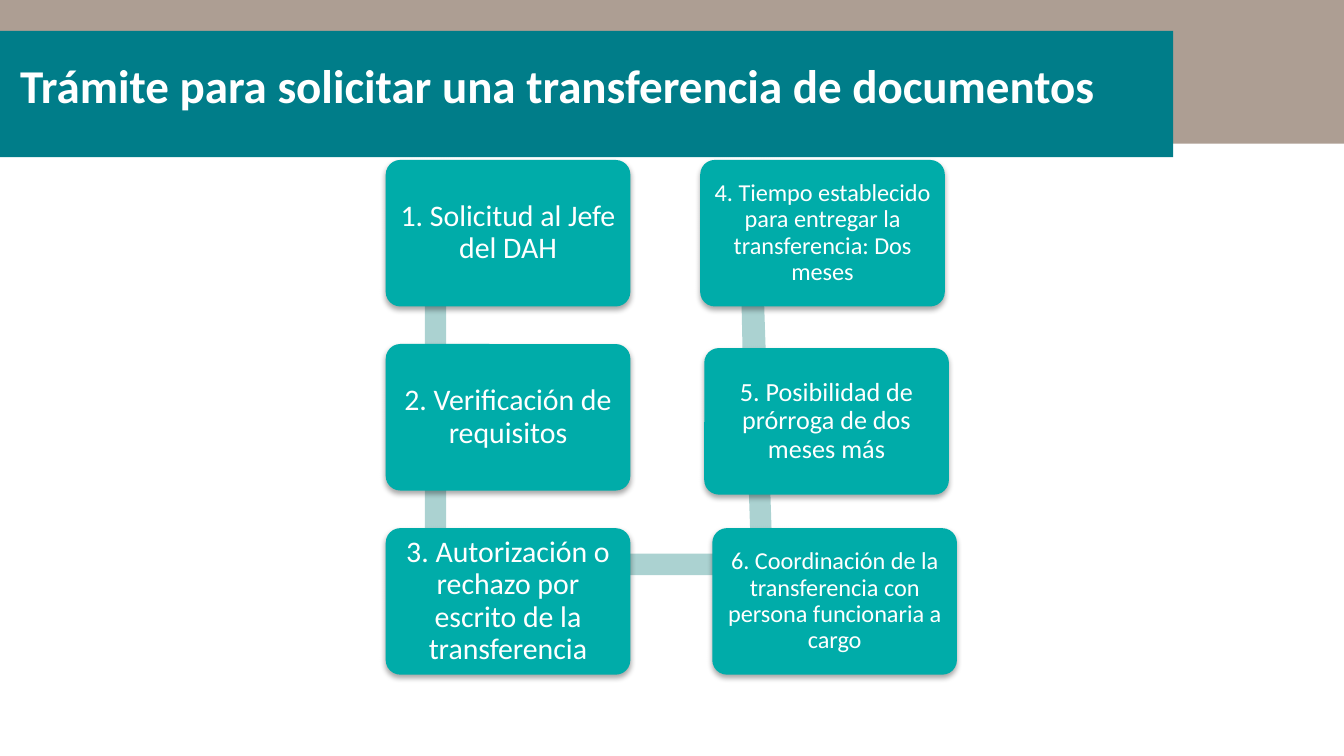
import math

import pptx
import pptx.dml.color
import pptx.enum.shapes
import pptx.enum.text
import pptx.util
from lxml import etree
from pptx.oxml.ns import qn

Inches = pptx.util.Inches
Pt = pptx.util.Pt
SHAPES = pptx.enum.shapes.MSO_SHAPE

COLOURS = {"band": "AD9E93", "banner": "007D89", "step": "00ACA9",
           "path": "ABD2D1", "text": "FFFFFF", "shadow": "000000"}
FONT = "Calibri"
STEP_W, STEP_H = 1.82, 1.09
ANCHOR_X, ANCHOR_Y = 0.37, 0.27  # where the path passes inside each step
PATH_THICKNESS = 0.16

# Steps in path order: left, top (relative to the flow), size, inset, text
STEPS = [
    (0, 0, 16, 0.07, "1. Solicitud al Jefe del DAH"),
    (0, 1.37, 16, 0.07, "2. Verificación de requisitos"),
    (0, 2.74, 16, 0.07, "3. Autorización o rechazo por escrito de la transferencia"),
    (2.43, 2.74, 13, 0.05,
     "6. Coordinación de la transferencia con persona funcionaria a cargo"),
    (2.34, 0, 13, 0.05,
     "4. Tiempo establecido para entregar la transferencia: Dos meses"),
    (2.37, 1.4, 14, 0.06, "5. Posibilidad de prórroga de dos meses más"),
]


def colour(name):
    return pptx.dml.color.RGBColor.from_string(COLOURS[name])


def add_block(slide, kind, left, top, width, height, fill):
    block = slide.shapes.add_shape(
        kind, Inches(left), Inches(top), Inches(width), Inches(height))
    block.shadow.inherit = False
    block.fill.solid()
    block.fill.fore_color.rgb = colour(fill)
    block.line.fill.background()
    return block


def write(frame, text, size, bold=False):
    frame.word_wrap = True
    frame.vertical_anchor = pptx.enum.text.MSO_ANCHOR.MIDDLE
    paragraph = frame.paragraphs[0]
    paragraph.alignment = pptx.enum.text.PP_ALIGN.CENTER
    run = paragraph.add_run()
    run.text = text
    run.font.name = FONT
    run.font.size = Pt(size)
    run.font.bold = bold
    run.font.color.rgb = colour("text")
    return paragraph


def add_soft_shadow(block):
    effects = block._element.spPr.find(qn("a:effectLst"))
    shadow = etree.SubElement(
        effects, qn("a:outerShdw"), blurRad=str(Pt(3.1)), dist=str(Pt(1.8)),
        dir="5400000", algn="ctr", rotWithShape="0")
    tint = etree.SubElement(shadow, qn("a:srgbClr"), val=COLOURS["shadow"])
    etree.SubElement(tint, qn("a:alpha"), val="35000")


def add_header(slide, left, top, width):
    add_block(slide, SHAPES.RECTANGLE, left, top, width, 1.07, "band")
    add_block(slide, SHAPES.RECTANGLE, left, top + 0.23, 8.73, 0.94, "banner")
    title = slide.shapes.title
    title.left, title.top = Inches(left - 0.35), Inches(top + 0.16)
    title.width, title.height = Inches(9), Inches(0.94)
    write(title.text_frame,
          "Trámite para solicitar una transferencia de documentos", 25.2, True)
    # Bring the title in front of the banner
    slide.shapes._spTree.append(title._element)


def add_path(slide, start, end):
    dx, dy = end[0] - start[0], end[1] - start[1]
    length = math.hypot(dx, dy)
    left = (start[0] + end[0] - length) / 2
    top = (start[1] + end[1] - PATH_THICKNESS) / 2
    path = add_block(slide, SHAPES.RECTANGLE, left, top, length,
                     PATH_THICKNESS, "path")
    path.rotation = math.degrees(math.atan2(dy, dx)) % 360


def add_step(slide, left, top, size, inset, text):
    step = add_block(slide, SHAPES.ROUNDED_RECTANGLE, left, top,
                     STEP_W, STEP_H, "step")
    step.adjustments[0] = 0.1
    add_soft_shadow(step)
    frame = step.text_frame
    frame.margin_left = frame.margin_right = Inches(inset)
    frame.margin_top = frame.margin_bottom = Inches(inset)
    write(frame, text, size).line_spacing = 0.9


def add_flow(slide, left, top):
    # Path pieces lie behind every step
    anchors = [(left + x + ANCHOR_X, top + y + ANCHOR_Y) for x, y, *_ in STEPS]
    for start, end in zip(anchors, anchors[1:]):
        add_path(slide, start, end)
    for x, y, size, inset, text in STEPS:
        add_step(slide, left + x, top + y, size, inset, text)


def main():
    deck = pptx.Presentation()
    # Widescreen, 16:9
    deck.slide_width = Inches(10)
    deck.slide_height = deck.slide_width * 9 // 16
    slide = deck.slides.add_slide(deck.slide_layouts[5])
    add_header(slide, 0, 0, 10)
    add_flow(slide, 2.87, 1.19)
    deck.save("out.pptx")


if __name__ == "__main__":
    main()
